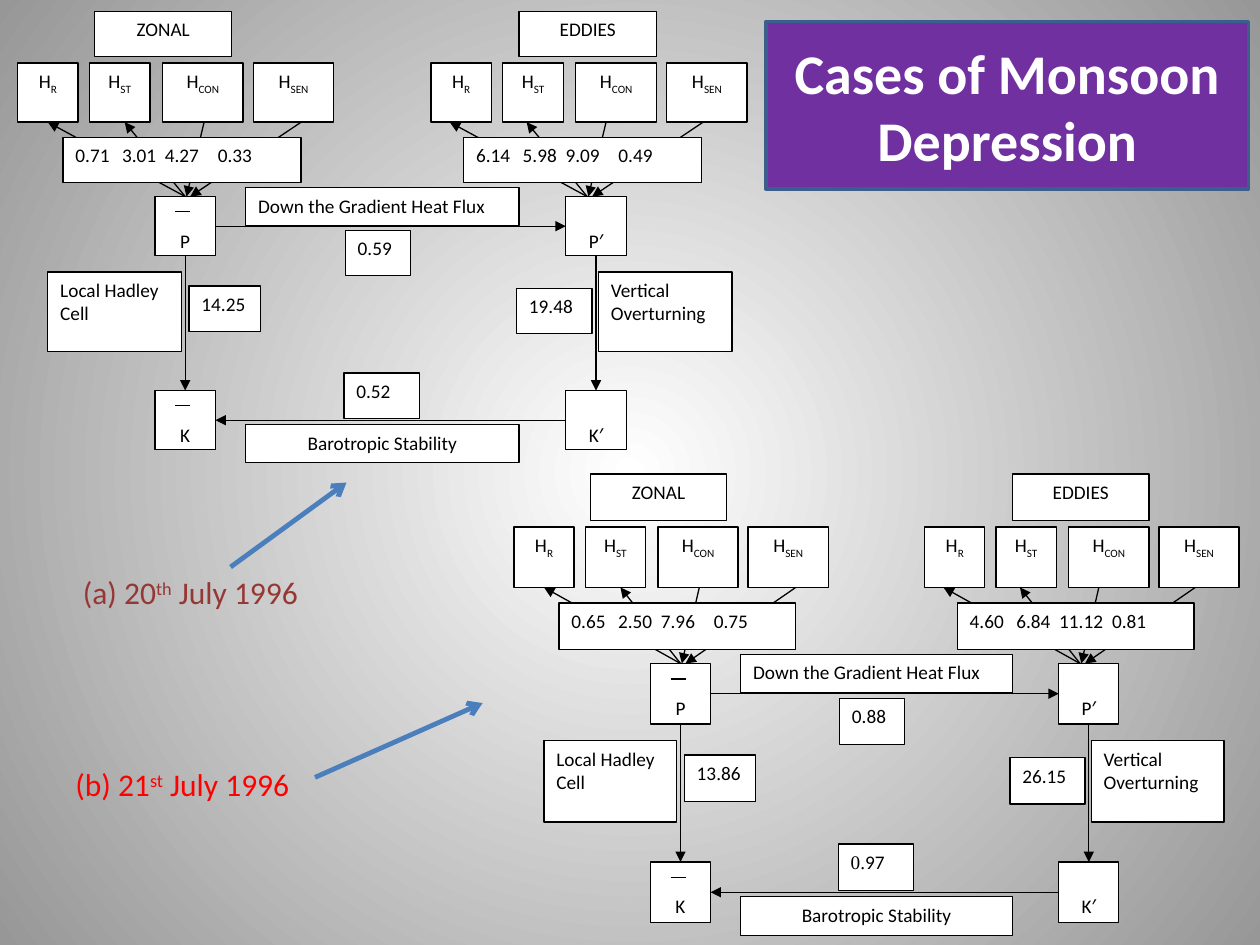
from dataclasses import dataclass
from typing import NamedTuple

import pptx
import pptx.dml.color
import pptx.enum.shapes
import pptx.enum.text
import pptx.oxml
import pptx.oxml.ns
import pptx.util

Inches, Pt = pptx.util.Inches, pptx.util.Pt
ALIGN, ANCHOR = pptx.enum.text.PP_ALIGN, pptx.enum.text.MSO_ANCHOR
RECT = pptx.enum.shapes.MSO_SHAPE.RECTANGLE
STRAIGHT = pptx.enum.shapes.MSO_CONNECTOR.STRAIGHT
qn = pptx.oxml.ns.qn
SANS, SERIF = "Calibri", "Times New Roman"
BLACK, WHITE, BLUE = "000000", "FFFFFF", "4B7EBC"
TOP, LEFT, BOTTOM, RIGHT = range(4)


class Run(NamedTuple):
    text: str
    base: int = 0
    font: str = ""


@dataclass
class Frame:
    """Places a diagram's own coordinates on the slide."""
    left: float
    top: float
    sx: float = 1
    sy: float = 1

    def x(self, x: float):
        return Inches(self.left + x * self.sx)

    def y(self, y: float):
        return Inches(self.top + y * self.sy)


@dataclass
class Column:
    """One energy column; each *_x is the left of that part."""
    name: str
    name_x: float
    heat_x: float
    bins_x: float
    arrows_x: float
    node_x: float
    mark: str
    process: str
    process_x: float
    rate_at: tuple


@dataclass
class Diagram:
    frame: Frame
    heats: tuple
    rates: tuple
    flux: str
    barotropic: list


COLUMNS = [
    Column("ZONAL", 0.75, 0.14, 0.5, 0.38, 1.23, "", "Local Hadley Cell", 0.38, (1.5, 2.27, 0.57)),
    Column("EDDIES", 4.12, 3.42, 3.68, 3.57, 4.49, "′", "Vertical Overturning", 4.75, (4.1, 2.29, 0.6)),
]
HEAT_BOXES = [("R", 0, 0.48), ("ST", 0.57, 0.48), ("CON", 1.15, 0.64), ("SEN", 1.87, 0.64)]
HEAT_ARROWS = [((1.09, 1.56), (0.61, 0.97)), ((1.09, 1.56), (0, 0.97)),
               ((1.24, 0.97), (1.1, 1.56)), ((2.01, 0.97), (1.13, 1.56))]
HEAT_TABS = (0.37, 0.71, 1.13)

DIAGRAMS = [
    Diagram(Frame(0, 0),
            (("0.71", "3.01", "4.27", "0.33"), ("6.14", "5.98", "9.09", "0.49")),
            ([Run("14.25")], [Run("19.48")]), "0.59", [Run("0.52")]),
    Diagram(Frame(3.94, 3.67, 0.994, 1.023),
            (("0.65", "2.50", "7.96", "0.75"), ("4.60", "6.84", "11.12", "0.81")),
            ([Run("13"), Run(".", font=SERIF), Run("86")], [Run("26.15")]),
            "0.88", [Run("0.", font=SERIF), Run("97")]),
]


def rgb(color: str):
    return pptx.dml.color.RGBColor.from_string(color)


def write(p, runs: list, size: float, color: str, bold: bool = False) -> None:
    p.font.size, p.font.name, p.font.bold = Pt(size), SANS, bold
    p.font.color.rgb = rgb(color)
    for run in runs:
        r = p.add_run()
        r.text = run.text
        if run.base:
            r._r.get_or_add_rPr().set("baseline", str(run.base * 1000))
        if run.font:
            r.font.name = run.font


def paint(sp, fill: str, line: str, width: float) -> None:
    sp.fill.solid()
    sp.fill.fore_color.rgb = rgb(fill)
    sp.line.color.rgb = rgb(line)
    sp.line.width = Pt(width)


def box(s, f: Frame, at: tuple, runs: list, centred: bool = False,
        inset: float = 0.05, tabs: tuple = ()):
    x, y, w, h = at
    sp = s.shapes.add_shape(RECT, f.x(x), f.y(y), Inches(w * f.sx), Inches(h * f.sy))
    sp.shadow.inherit = False
    paint(sp, WHITE, BLACK, 0.75)
    tf = sp.text_frame
    tf.word_wrap = True
    tf.vertical_anchor = ANCHOR.TOP
    tf.margin_top = Inches(inset)
    p = tf.paragraphs[0]
    p.alignment = ALIGN.CENTER if centred else ALIGN.LEFT
    if tabs:
        tab_list = pptx.oxml.parse_xml(f'<a:tabLst {pptx.oxml.ns.nsdecls("a")}/>')
        for tab in tabs:
            tab_list.append(tab_list.makeelement(qn("a:tab"), {"pos": str(Inches(tab)), "algn": "l"}))
        p._p.get_or_add_pPr().append(tab_list)
    write(p, runs, 11, BLACK)
    return sp


def line(s, f: Frame, start: tuple, end: tuple, head: str = "triangle",
         color: str = BLACK, width: float = 0.75):
    c = s.shapes.add_connector(STRAIGHT, f.x(start[0]), f.y(start[1]), f.x(end[0]), f.y(end[1]))
    c.line.color.rgb = rgb(color)
    c.line.width = Pt(width)
    if head:
        ln = c.line._get_or_add_ln()
        ln.append(ln.makeelement(qn("a:tailEnd"), {"type": head}))
    pr = c._element.spPr
    pr.append(pr.makeelement(qn("a:effectLst"), {}))
    return c


def join(s, f: Frame, a, a_side: int, b, b_side: int) -> None:
    c = line(s, f, (0, 0), (1, 1))
    c.begin_connect(a, a_side)
    c.end_connect(b, b_side)


def draw_column(s, f: Frame, col: Column, heats: tuple, rate: list) -> list:
    """Draws one column and returns its P and K boxes."""
    box(s, f, (col.name_x, 0.09, 1.09, 0.36), [Run(col.name)], True)
    for sub, dx, w in HEAT_BOXES:
        box(s, f, (col.heat_x + dx, 0.5, w, 0.47), [Run("H"), Run(sub, -25)], True)
    for (x1, y1), (x2, y2) in HEAT_ARROWS:
        line(s, f, (col.arrows_x + x1, y1), (col.arrows_x + x2, y2))
    box(s, f, (col.bins_x, 1.09, 1.89, 0.36), [Run("\t".join(heats))], tabs=HEAT_TABS)
    nodes = []
    for letter, y in (("P", 1.56), ("K", 3.1)):
        nodes.append(box(s, f, (col.node_x, y, 0.48, 0.47), [Run(letter + col.mark)], True, 0.26))
        if not col.mark:
            line(s, f, (col.node_x + 0.16, y + 0.12), (col.node_x + 0.28, y + 0.12), head="")
    join(s, f, nodes[0], BOTTOM, nodes[1], TOP)
    box(s, f, (col.process_x, 2.16, 1.06, 0.63), [Run(col.process)])
    box(s, f, (*col.rate_at, 0.36), rate)
    return nodes


def draw_diagram(s, d: Diagram) -> None:
    f = d.frame
    (p_mean, k_mean), (p_eddy, k_eddy) = [
        draw_column(s, f, *parts) for parts in zip(COLUMNS, d.heats, d.rates)]
    join(s, f, p_mean, RIGHT, p_eddy, LEFT)
    join(s, f, k_eddy, LEFT, k_mean, RIGHT)
    box(s, f, (1.95, 1.49, 2.17, 0.3), [Run("Down the Gradient Heat Flux")])
    box(s, f, (1.95, 3.37, 2.17, 0.3), [Run("Barotropic Stability")], True)
    box(s, f, (2.74, 1.83, 0.52, 0.36), [Run(d.flux)])
    box(s, f, (2.73, 2.96, 0.6, 0.36), d.barotropic)


def draw_background(s) -> None:
    fill = s.background.fill
    fill.gradient()
    for stop, position, color in zip(fill.gradient_stops, (0, 1), (WHITE, "979797")):
        stop.position = position
        stop.color.rgb = rgb(color)
    grad = s._element.find(".//" + qn("a:gradFill"))
    grad.remove(grad.find(qn("a:lin")))
    centre = "".join(f' {side}="50000"' for side in "ltrb")
    grad.append(pptx.oxml.parse_xml(
        f'<a:path {pptx.oxml.ns.nsdecls("a")} path="circle"><a:fillToRect{centre}/></a:path>'))


def draw_title(s) -> None:
    sp = s.shapes.title
    sp.left, sp.top, sp.width, sp.height = map(Inches, (6.08, 0.17, 3.83, 1.33))
    paint(sp, "7030A0", "3A5F8C", 2)
    sp.text_frame.vertical_anchor = ANCHOR.MIDDLE
    p = sp.text_frame.paragraphs[0]
    p.alignment = ALIGN.CENTER
    write(p, [Run("Cases of Monsoon Depression")], 32, WHITE, True)


def draw_dates(s) -> None:
    tf = s.shapes.add_textbox(*map(Inches, (0.5, 4.5, 3, 1.92))).text_frame
    tf.word_wrap = True
    p = tf.paragraphs[0]
    p._p.get_or_add_pPr().set("marL", str(Inches(0.06)))
    write(p, [Run("(a) 20"), Run("th", 30), Run(" July 1996")], 18, "953735")
    p = tf.add_paragraph()
    p.space_before = Pt(88)
    write(p, [Run("(b) 21"), Run("st", 30), Run(" July 1996")], 18, "FF0000")


def main() -> None:
    prs = pptx.Presentation()
    prs.slide_width, prs.slide_height = Inches(10), Inches(7.5)
    s = prs.slides.add_slide(prs.slide_layouts[5])
    draw_background(s)
    for d in DIAGRAMS:
        draw_diagram(s, d)
    draw_title(s)
    draw_dates(s)
    for start, end in (((2.5, 6.17), (3.83, 5.58)), ((1.83, 4.5), (2.75, 3.83))):
        line(s, Frame(0, 0), start, end, "arrow", BLUE, 2.75)
    prs.save("out.pptx")


if __name__ == "__main__":
    main()
